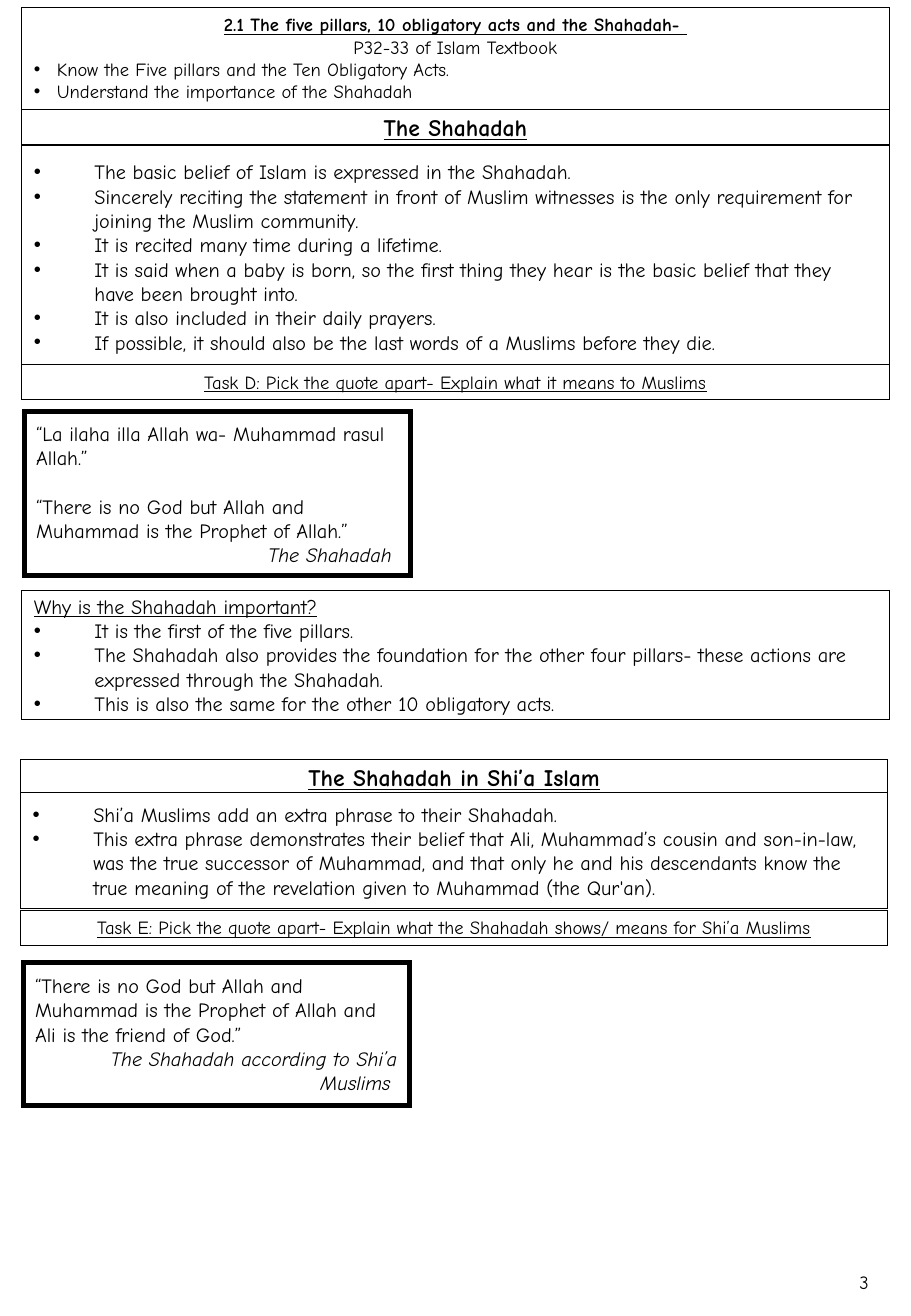
"""Build a one-page handout on the Shahadah."""
from lxml.etree import SubElement
from pptx import Presentation
from pptx.dml.color import RGBColor as Rgb
from pptx.enum.shapes import MSO_SHAPE as Shape
from pptx.enum.text import MSO_ANCHOR as Anchor, PP_ALIGN as Align
from pptx.oxml.ns import qn
from pptx.util import Inches, Pt

COLORS = {"ink": "000000", "paper": "FFFFFF"}
FONT = "Comic Neue"
WIDE = 7.14
ROW = 0.29

PLAIN = {"size": Pt(12)}
SMALL = {"size": Pt(11)}
LEAD = {"size": Pt(11), "bold": True, "underline": True}
HEAD = {"size": Pt(14), "bold": True, "underline": True}
TASK = {"size": Pt(11), "underline": True}
ASK = {"size": Pt(12), "underline": True}
CITE = {"size": Pt(12), "italic": True}

LEFT = {"alignment": Align.LEFT}
MID = {"alignment": Align.CENTER}
RIGHT = {"alignment": Align.RIGHT}
GAP = {"alignment": Align.LEFT, "space_after": Pt(14.4)}
LOOSE = {"alignment": Align.CENTER, "line_spacing": 1.5}


def color(name):
    """Return a named colour."""
    return Rgb.from_string(COLORS[name])


def apply(item, form):
    """Set each format value on an item."""
    for key, value in form.items():
        setattr(item, key, value)


def add_box(slide, x, y, w, h, anchor=Anchor.MIDDLE, edge="ink", width=0.5):
    """Add a framed box and return its text frame."""
    box = slide.shapes.add_shape(
        Shape.RECTANGLE, Inches(x), Inches(y), Inches(w), Inches(h))
    box.shadow.inherit = False
    box.fill.solid()
    box.fill.fore_color.rgb = color("paper")
    box.line.color.rgb = color(edge)
    box.line.width = Pt(width)
    SubElement(box.line._get_or_add_ln(), qn("a:miter"), lim="800000")
    frame = box.text_frame
    apply(frame, {"word_wrap": True, "vertical_anchor": anchor})
    return frame


def add_text(frame, text, font, layout=LEFT):
    """Add one formatted paragraph to a frame."""
    para = frame.paragraphs[0]
    if para.runs:
        para = frame.add_paragraph()
    apply(para, layout)
    run = para.add_run()
    run.text = text
    apply(run.font, {"name": FONT, **font})
    run.font.color.rgb = color("ink")
    return para


def add_list(frame, lines, font=PLAIN, indent=0.5):
    """Add bulleted paragraphs with a hanging indent."""
    for line in lines:
        props = add_text(frame, line, font)._p.get_or_add_pPr()
        props.set("marL", str(Inches(indent)))
        props.set("indent", str(-Inches(indent)))
        SubElement(props, qn("a:buFont"), typeface="Arial")
        SubElement(props, qn("a:buChar"), char="•")


def add_head(slide, x, y, text):
    """Add a section heading row."""
    add_text(add_box(slide, x, y, WIDE, ROW), text, HEAD, MID)


def add_task(slide, x, y, text):
    """Add a task row."""
    add_text(add_box(slide, x, y, WIDE, ROW, Anchor.TOP), text, TASK, MID)


def add_quote(slide, x, y, h, quotes, source):
    """Add a thick-framed box of quotes and their source."""
    frame = add_box(slide, x, y, 3.18, h, width=3)
    for quote in quotes[:-1]:
        add_text(frame, quote, PLAIN, GAP)
    add_text(frame, quotes[-1], PLAIN)
    add_text(frame, source, CITE, RIGHT)


def add_intro(slide):
    """Add the lesson title and its aims."""
    frame = add_box(slide, 0.18, 0.06, WIDE, 0.84, Anchor.TOP)
    add_text(frame, "2.1 The five pillars, 10 obligatory acts and the Shahadah- ",
             LEAD, MID)
    add_text(frame, "P32-33 of Islam Textbook", SMALL, MID)
    add_list(frame, [
        "Know the Five pillars and the Ten Obligatory Acts.",
        "Understand the importance of the Shahadah",
    ], SMALL, 0.19)


def add_creed(slide):
    """Add the section on the Shahadah."""
    x = 0.18
    add_head(slide, x, 0.9, "The Shahadah")
    add_list(add_box(slide, x, 1.2, WIDE, 1.83), [
        "The basic belief of Islam is expressed in the Shahadah.",
        "Sincerely reciting the statement in front of Muslim witnesses is "
        "the only requirement for joining the Muslim community.",
        "It is recited many time during a lifetime.",
        "It is said when a baby is born, so the first thing they hear is "
        "the basic belief that they have been brought into.",
        "It is also included in their daily prayers.",
        "If possible, it should also be the last words of a Muslims before they die.",
    ])
    add_task(slide, x, 3, "Task D: Pick the quote apart- Explain what it means to Muslims")
    add_quote(slide, 0.2, 3.39, 1.35, [
        "“La ilaha illa Allah wa- Muhammad rasul Allah.”",
        "“There is no God but Allah and Muhammad is the Prophet of Allah.”",
    ], "The Shahadah ")
    frame = add_box(slide, x, 4.86, WIDE, 1.06)
    add_text(frame, "Why is the Shahadah important?", ASK)
    add_list(frame, [
        "It is the first of the five pillars.",
        "The Shahadah also provides the foundation for the other four "
        "pillars- these actions are expressed through the Shahadah.",
        "This is also the same for the other 10 obligatory acts.",
    ])


def add_shia(slide):
    """Add the section on Shi’a Islam."""
    x = 0.17
    add_head(slide, x, 6.25, "The Shahadah in Shi’a Islam")
    add_list(add_box(slide, x, 6.52, WIDE, 0.96), [
        "Shi’a Muslims add an extra phrase to their Shahadah.",
        "This extra phrase demonstrates their belief that Ali, Muhammad’s "
        "cousin and son-in-law, was the true successor of Muhammad, and that "
        "only he and his descendants know the true meaning of the revelation "
        "given to Muhammad (the Qur'an).",
    ])
    add_task(slide, x, 7.49, "Task E: Pick the quote apart- Explain what the "
             "Shahadah shows/ means for Shi’a Muslims")
    add_quote(slide, 0.19, 7.92, 1.18, [
        "“There is no God but Allah and Muhammad is the Prophet of Allah "
        "and Ali is the friend of God.”",
    ], "The Shahadah according to Shi’a Muslims ")


def main():
    """Build and save the page."""
    deck = Presentation()
    apply(deck, {"slide_width": Inches(7.5), "slide_height": Inches(10.83)})
    slide = deck.slides.add_slide(deck.slide_layouts[6])
    add_intro(slide)
    add_creed(slide)
    add_shia(slide)
    page = add_box(slide, 6.91, 10.32, 0.41, 0.35, Anchor.TOP, "paper")
    add_text(page, "3", SMALL, LOOSE)
    deck.save("out.pptx")


if __name__ == "__main__":
    main()
